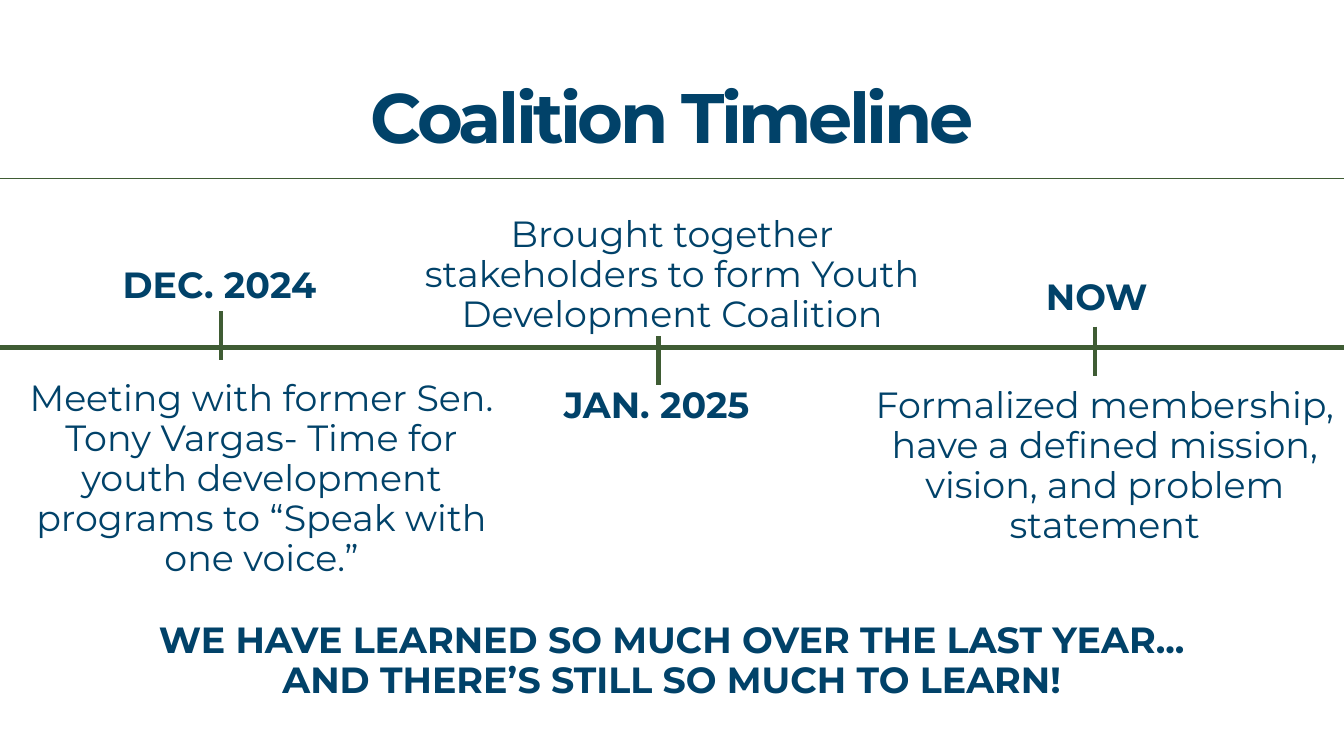
from dataclasses import dataclass

from lxml.etree import SubElement
from pptx import Presentation
from pptx.dml.color import RGBColor
from pptx.enum.shapes import MSO_CONNECTOR as Conn
from pptx.enum.text import MSO_ANCHOR as Anchor, MSO_AUTO_SIZE as AutoSize, PP_ALIGN as Align
from pptx.oxml.ns import qn
from pptx.util import Inches, Pt


@dataclass(frozen=True)
class Theme:
    """Colours, font, type sizes and line widths of the slide."""
    ink: RGBColor = RGBColor(0x01, 0x42, 0x69)
    rule: RGBColor = RGBColor(0x3F, 0x5C, 0x34)
    font: str = "Montserrat"
    title: float = 75
    title_leading: float = 83.2
    title_tracking: float = -3.8
    body: float = 39
    body_leading: float = 42.9
    thin: float = 1.5
    thick: float = 4.5


THEME = Theme()
WIDTH, HEIGHT, BLEED = 20, 11.25, 0.73
AXIS_Y = 5.17
TICK = 0.73
MILESTONES = [
    ("DEC. 2024", (1.53, 3.96, 3.47, 0.61),
     "Meeting with former Sen. Tony Vargas- Time for youth development programs to “Speak with one voice.”",
     (0.33, 5.64, 7.12, 2.98), (3.29, 4.63)),
    ("JAN. 2025", (6.21, 5.74, 7.12, 0.61),
     "Brought together stakeholders to form Youth Development Coalition",
     (5.95, 3.2, 8.1, 1.79), (9.8, 5)),
    ("NOW", (12.76, 4.14, 7.12, 0.61),
     "Formalized membership, have a defined mission, vision, and problem statement",
     (12.88, 5.74, 7.12, 2.39), (16.29, 4.86)),
]


def apply(target, values):
    """Set each named attribute on the target."""
    for name, value in values.items():
        setattr(target, name, value)


def add_line(s, start, end, width):
    """Draw a straight rule without a shadow."""
    points = [Inches(v) for v in (*start, *end)]
    line = s.shapes.add_connector(Conn.STRAIGHT, *points)
    line.line.color.rgb = THEME.rule
    line.line.width = Pt(width)
    SubElement(line._element.spPr, qn("a:effectLst"))


def write(sp, text, size, leading, bold=False):
    """Fill a shape with one centred paragraph."""
    tf = sp.text_frame
    apply(tf, dict(margin_left=0, margin_right=0, margin_top=0, margin_bottom=0,
                   word_wrap=True, auto_size=AutoSize.SHAPE_TO_FIT_TEXT,
                   vertical_anchor=Anchor.TOP))
    p = tf.paragraphs[0]
    apply(p, dict(alignment=Align.CENTER, line_spacing=Pt(leading),
                  space_before=Pt(0), space_after=Pt(0)))
    r = p.add_run()
    r.text = text
    apply(r.font, dict(name=THEME.font, size=Pt(size), bold=bold))
    r.font.color.rgb = THEME.ink
    return r


def add_text(s, box, text, bold=False):
    """Place a body-sized text box."""
    sp = s.shapes.add_textbox(*map(Inches, box))
    write(sp, text, THEME.body, THEME.body_leading, bold)


def add_header(s, box, rule_y):
    """Place the title and the rule beneath it."""
    sp = s.shapes.title
    apply(sp, dict(zip(("left", "top", "width", "height"), map(Inches, box))))
    r = write(sp, "Coalition Timeline", THEME.title, THEME.title_leading, True)
    r.font._element.set("spc", str(round(THEME.title_tracking * 100)))
    add_line(s, (-BLEED, rule_y), (WIDTH + BLEED, rule_y), THEME.thin)


def add_milestone(s, date, date_box, text, text_box, tick):
    """Place one milestone: its date, description and tick."""
    add_text(s, date_box, date, True)
    add_text(s, text_box, text)
    x, y = tick
    add_line(s, tick, (x, y + TICK), THEME.thick)


def add_timeline(s, y):
    """Draw the axis and all its milestones."""
    add_line(s, (-BLEED, y), (WIDTH + BLEED, y), THEME.thick)
    for milestone in MILESTONES:
        add_milestone(s, *milestone)


def add_closing(s, box):
    """Place the closing statement."""
    add_text(s, box, "WE HAVE LEARNED SO MUCH OVER THE LAST YEAR... "
                     "AND THERE’S STILL SO MUCH TO LEARN!", True)


def main():
    """Build and save the slide."""
    prs = Presentation()
    apply(prs, dict(slide_width=Inches(WIDTH), slide_height=Inches(HEIGHT)))
    s = prs.slides.add_slide(prs.slide_layouts.get_by_name("Title Only"))
    add_header(s, (3.68, 1.19, 12.65, 1.19), 2.66)
    add_timeline(s, AXIS_Y)
    add_closing(s, (1.89, 9.24, 16.21, 1.2))
    prs.save("out.pptx")


if __name__ == "__main__":
    main()
